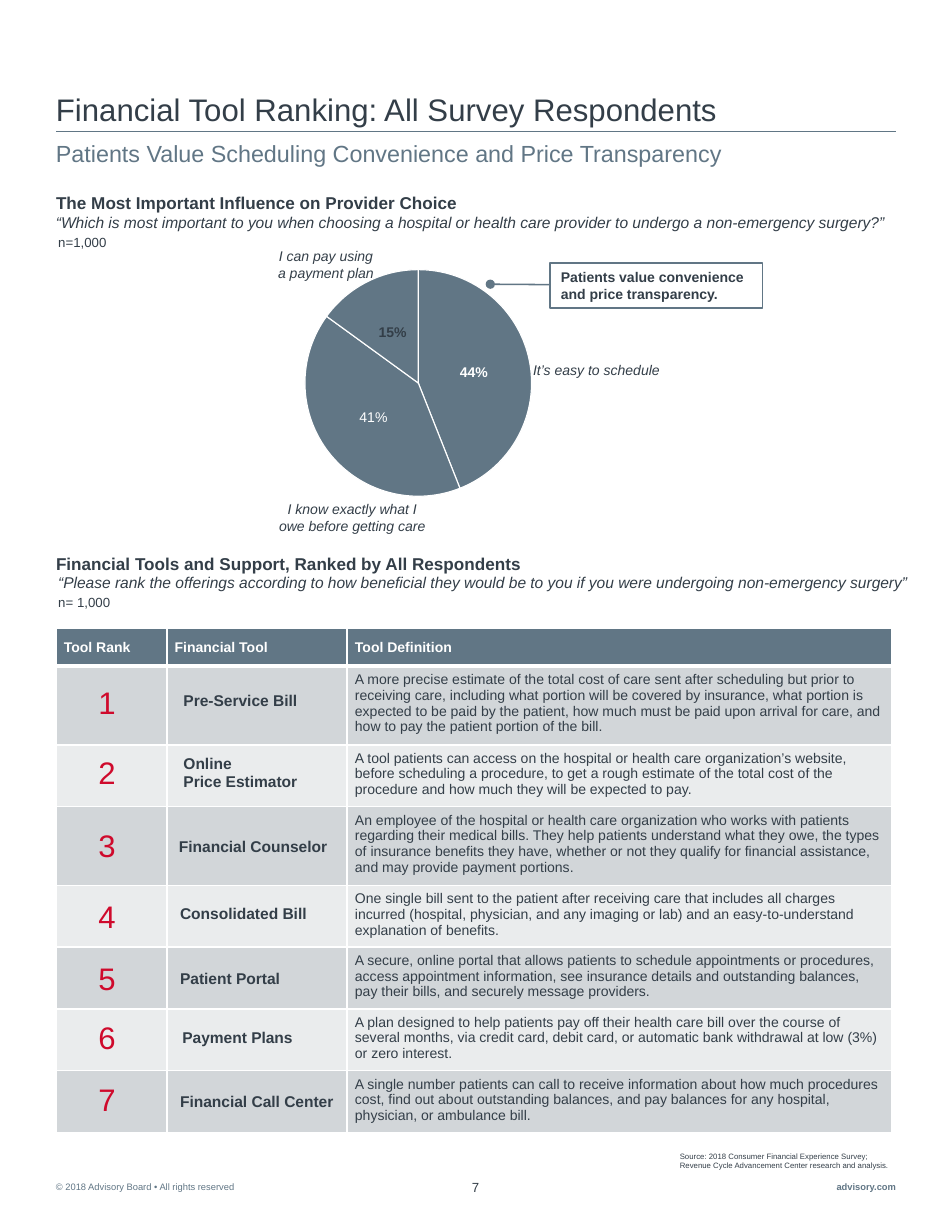
import pptx
import pptx.util
import pptx.chart.data
import pptx.dml.color
import pptx.enum.chart
import pptx.enum.shapes
import pptx.enum.text
import pptx.oxml
import pptx.oxml.ns

Inches, Pt = pptx.util.Inches, pptx.util.Pt
RGB = pptx.dml.color.RGBColor.from_string
Align = pptx.enum.text.PP_ALIGN
Anchor = pptx.enum.text.MSO_ANCHOR
NS = pptx.oxml.ns.nsdecls("a")
INK = {"dark": "333E48", "slate": "617685", "red": "CF0A2C",
       "white": "FFFFFF", "band": "D2D6D9", "pale": "EAECED"}


def put(frame, text, size=9, color="dark", bold=False, italic=False,
        align=Align.LEFT, anchor=Anchor.TOP):
    """Fill a text frame, one paragraph per line of text."""
    frame.text = text
    frame.vertical_anchor = anchor
    for para in frame.paragraphs:
        para.alignment = align
        for run in para.runs:
            font = run.font
            font.name, font.size = "Arial", Pt(size)
            font.bold, font.italic = bold, italic
            font.color.rgb = RGB(INK[color])


def label(spot, text, pad=(0, 0), wrap=True, **style):
    """Add a text box at (left, top, width, height) in inches."""
    frame = slide.shapes.add_textbox(*map(Inches, spot)).text_frame
    frame.margin_left = frame.margin_right = Inches(pad[0])
    frame.margin_top = frame.margin_bottom = Inches(pad[1])
    frame.word_wrap = wrap
    put(frame, text, **style)


deck = pptx.Presentation()
deck.slide_width, deck.slide_height = Inches(8.5), Inches(11)
slide = deck.slides.add_slide(deck.slide_layouts[6])

# Footer and title rule
label((7.14, 10.55, 0.86, 0.1), "advisory.com", size=6, color="slate",
      bold=True, align=Align.RIGHT)
label((4.02, 10.53, 0.45, 0.14), "7", size=8.5, align=Align.CENTER)
label((0.5, 10.55, 2.24, 0.1), "© 2018 Advisory Board • All rights reserved",
      size=6, color="slate")
rule = slide.shapes.add_connector(
    pptx.enum.shapes.MSO_CONNECTOR.STRAIGHT,
    Inches(0.5), Inches(1.17), Inches(8), Inches(1.17))
rule.line.color.rgb = RGB(INK["slate"])
rule.line.width = Pt(0.5)
rule._element.spPr.append(pptx.oxml.parse_xml(f"<a:effectLst {NS}/>"))

# Headings
label((0.5, 0.8, 7.5, 0.34), "Financial Tool Ranking: All Survey Respondents",
      size=20, anchor=Anchor.BOTTOM)
label((0.5, 1.24, 7.5, 0.25),
      "Patients Value Scheduling Convenience and Price Transparency",
      size=15, color="slate")
heads = [
    (1.72, 0.5, 7.5, "The Most Important Influence on Provider Choice",
     "“Which is most important to you when choosing a hospital or health care "
     "provider to undergo a non-emergency surgery?”", "n=1,000"),
    (4.94, 0.52, 7.66, "Financial Tools and Support, Ranked by All Respondents",
     "“Please rank the offerings according to how beneficial they would be to "
     "you if you were undergoing non-emergency surgery”", "n= 1,000"),
]
for top, left, width, head, quote, count in heads:
    label((0.5, top, 5.82, 0.19), head, size=11, bold=True)
    label((left, top + 0.18, width, 0.17), quote, size=10, italic=True)
    label((0.52, top + 0.37, 6.09, 0.14), count, size=8.5)

# Pie chart
data = pptx.chart.data.CategoryChartData(number_format="0%")
data.categories = ["1", "2", "3"]
data.add_series("Series 1", (0.44, 0.41, 0.15))
chart = slide.shapes.add_chart(
    pptx.enum.chart.XL_CHART_TYPE.PIE, Inches(2.46), Inches(2.27),
    Inches(2.55), Inches(2.3), data).chart
chart.has_legend = chart.has_title = False
chart.font.name, chart.font.size, chart.font.bold = "Arial", Pt(9), True
chart.font.color.rgb = RGB(INK["dark"])
plot = chart.plots[0]
plot.vary_by_categories = False
plot.has_data_labels = True
plot.data_labels.show_value = True
plot.data_labels.number_format = "0%"
plot.data_labels.number_format_is_linked = False
center = pptx.enum.chart.XL_LABEL_POSITION.CENTER
plot.data_labels.position = center
for i, (color, bold) in enumerate([("white", True), ("white", False),
                                   ("dark", True)]):
    point = plot.series[0].points[i]
    point.format.fill.solid()
    point.format.fill.fore_color.rgb = RGB(INK["slate"])
    point.format.line.color.rgb = RGB(INK["white"])
    point.format.line.width = Pt(0.75)
    font = point.data_label.font
    font.name, font.size, font.bold = "Arial", Pt(9), bold
    font.color.rgb = RGB(INK[color])
    point.data_label.position = center
area = chart._chartSpace.chart.plotArea
for old in area.findall(pptx.oxml.ns.qn("c:layout")):
    area.remove(old)
area.insert(0, pptx.oxml.parse_xml(
    f'<c:layout {pptx.oxml.ns.nsdecls("c")}><c:manualLayout>'
    '<c:layoutTarget val="inner"/><c:xMode val="edge"/><c:yMode val="edge"/>'
    '<c:x val="0.1"/><c:y val="0.06"/><c:w val="0.8"/><c:h val="0.88"/>'
    '</c:manualLayout></c:layout>'))

for spot, text in [
    ((4.75, 3.23, 1.15, 0.15), "It’s easy to schedule"),
    ((2.47, 4.47, 1.35, 0.3), "I know exactly what I owe before getting care"),
    ((2.47, 2.21, 0.88, 0.3), "I can pay using a payment plan"),
]:
    label(spot, text, italic=True, align=Align.CENTER)

note = slide.shapes.add_shape(
    pptx.enum.shapes.MSO_SHAPE.LINE_CALLOUT_1,
    Inches(4.91), Inches(2.35), Inches(1.9), Inches(0.4))
for i, ratio in enumerate((0.48, 0, 0.47, -0.28)):
    note.adjustments[i] = ratio
note.shadow.inherit = False
note.fill.solid()
note.fill.fore_color.rgb = RGB(INK["white"])
note.line.color.rgb = RGB(INK["slate"])
note.line.width = Pt(1)
note.line._get_or_add_ln().append(
    pptx.oxml.parse_xml(f'<a:tailEnd {NS} type="oval"/>'))
note.text_frame.word_wrap = True
put(note.text_frame, "Patients value convenience and price transparency.",
    bold=True)

# Ranking table: name, its left, top and height, top of rank, row height, text
tools = [
    ("Pre-Service Bill", 1.54, 6.12, 0.27, 6.05, 0.7,
     "A more precise estimate of the total cost of care sent after scheduling but prior to receiving care, including what portion will be covered by insurance, what portion is expected to be paid by the patient, how much must be paid upon arrival for care, and how to pay the patient portion of the bill."),
    ("Online\nPrice Estimator", 1.54, 6.68, 0.44, 6.68, 0.55,
     "A tool patients can access on the hospital or health care organization’s website, before scheduling a procedure, to get a rough estimate of the total cost of the procedure and how much they will be expected to pay."),
    ("Financial Counselor", 1.5, 7.42, 0.27, 7.33, 0.7,
     "An employee of the hospital or health care organization who works with patients regarding their medical bills. They help patients understand what they owe, the types of insurance benefits they have, whether or not they qualify for financial assistance, and may provide payment portions."),
    ("Consolidated Bill", 1.51, 8.02, 0.27, 7.96, 0.55,
     "One single bill sent to the patient after receiving care that includes all charges incurred (hospital, physician, and any imaging or lab) and an easy-to-understand explanation of benefits."),
    ("Patient Portal", 1.51, 8.6, 0.27, 8.52, 0.55,
     "A secure, online portal that allows patients to schedule appointments or procedures, access appointment information, see insurance details and outstanding balances, pay their bills, and securely message providers."),
    ("Payment Plans", 1.53, 9.13, 0.27, 9.04, 0.55,
     "A plan designed to help patients pay off their health care bill over the course of several months, via credit card, debit card, or automatic bank withdrawal at low (3%) or zero interest."),
    ("Financial Call Center", 1.51, 9.7, 0.27, 9.6, 0.55,
     "A single number patients can call to receive information about how much procedures cost, find out about outstanding balances, and pay balances for any hospital, physician, or ambulance bill."),
]
table = slide.shapes.add_table(len(tools) + 1, 3, Inches(0.5), Inches(5.61),
                               Inches(7.46), Inches(4.49)).table
table.horz_banding = False
for col, width in zip(table.columns, (0.99, 1.61, 4.86)):
    col.width = Inches(width)
cells = [("Tool Rank", "Financial Tool", "Tool Definition")]
cells += [("", "", tool[-1]) for tool in tools]
highs = [0.34] + [tool[5] for tool in tools]
for r, (row, high) in enumerate(zip(cells, highs)):
    table.rows[r].height = Inches(high)
    for c, text in enumerate(row):
        cell = table.cell(r, c)
        cell.margin_left = cell.margin_right = Inches(0.07)
        cell.margin_top = cell.margin_bottom = Inches(0.05)
        put(cell.text_frame, text, bold=r == 0,
            color="dark" if r else "white")
        cell.vertical_anchor = Anchor.TOP if r else Anchor.MIDDLE
        for side in "LRTB":
            thick = Pt(3 if (r, side) in [(0, "B"), (1, "T")] else 1)
            cell._tc.get_or_add_tcPr().append(pptx.oxml.parse_xml(
                f'<a:ln{side} {NS} w="{thick}"><a:solidFill><a:srgbClr '
                f'val="{INK["white"]}"/></a:solidFill></a:ln{side}>'))
        cell.fill.solid()
        shade = "slate" if r == 0 else "band" if r % 2 else "pale"
        cell.fill.fore_color.rgb = RGB(INK[shade])

for rank, (name, left, top, high, mark, *rest) in enumerate(tools, 1):
    label((left, top, 1.6, high), name, pad=(0.1, 0.05), size=10, bold=True)
    label((0.78, mark, 0.36, 0.44), str(rank), pad=(0.1, 0.05), wrap=False,
          size=20, color="red")

label((6.07, 10.19, 1.93, 0.26),
      "Source: 2018 Consumer Financial Experience Survey; "
      "Revenue Cycle Advancement Center research and analysis.",
      size=5, anchor=Anchor.BOTTOM)

deck.save("out.pptx")
